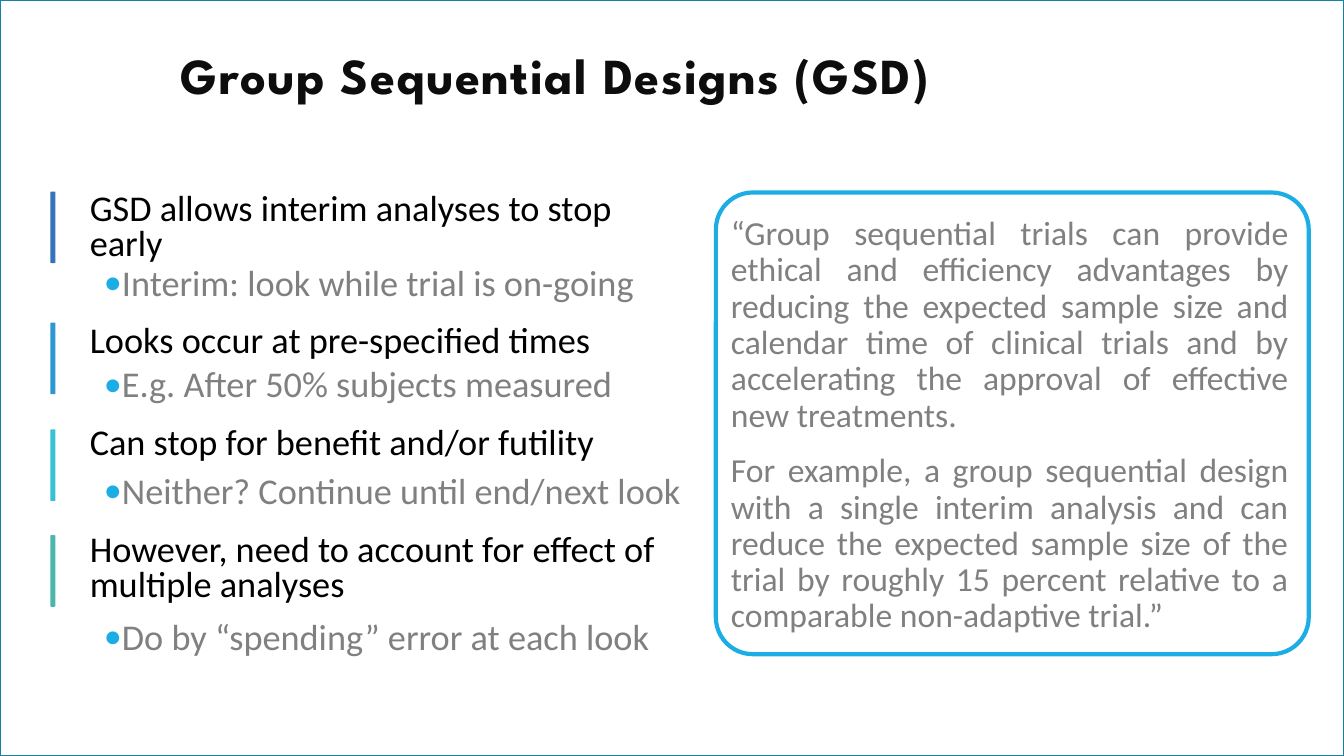
from dataclasses import dataclass

from lxml.etree import SubElement
from pptx import Presentation
from pptx.dml.color import RGBColor
from pptx.enum.shapes import MSO_SHAPE
from pptx.enum.text import MSO_ANCHOR, MSO_AUTO_SIZE, PP_ALIGN
from pptx.oxml.ns import qn
from pptx.util import Inches, Pt

TITLE = "Group Sequential Designs (GSD)"
POINTS = [
    ("GSD allows interim analyses to stop early",
     "Interim: look while trial is on-going", 0.8, 1.9, "3474BB"),
    ("Looks occur at pre-specified times",
     "E.g. After 50% subjects measured", 0.9, 3.2, "2D98D3"),
    ("Can stop for benefit and/or futility",
     "Neither? Continue until end/next look", 1.0, 4.26, "35C2D6"),
    ("However, need to account for effect of multiple analyses",
     "Do by “spending” error at each look", 1.1, 5.31, "4CB6AC"),
]
QUOTE = [
    "“Group sequential trials can provide ethical and efficiency advantages by "
    "reducing the expected sample size and calendar time of clinical trials and by "
    "accelerating the approval of effective new treatments.",
    "For example, a group sequential design with a single interim analysis and can "
    "reduce the expected sample size of the trial by roughly 15 percent relative to a "
    "comparable non-adaptive trial.”",
]


@dataclass(frozen=True)
class Theme:
    title_font: str = "League Spartan"
    body_font: str = "Calibri"
    title_size: float = 36
    point_size: float = 25.9
    quote_size: float = 24
    title_color: str = "0D0D0D"
    point_color: str = "000000"
    muted: str = "808080"
    accent: str = "1CADE4"
    frame: str = "1580A9"


THEME = Theme()


def place(shape, left, top, width, height):
    shape.left, shape.top = Inches(left), Inches(top)
    shape.width, shape.height = Inches(width), Inches(height)


def style(paragraph, font_name, size, color, bold=False):
    for run in paragraph.runs:
        run.font.name = font_name
        run.font.size = Pt(size)
        run.font.bold = bold
        run.font.color.rgb = RGBColor.from_string(color)


def space(paragraph, line, before, after):
    paragraph.line_spacing = line
    paragraph.space_before = Pt(before)
    paragraph.space_after = Pt(after)


def indent(paragraph, margin, first=0.0, bullet=None):
    properties = paragraph._p.get_or_add_pPr()
    properties.set("marL", str(Inches(margin)))
    properties.set("indent", str(Inches(first)))
    if bullet:
        bullet_color = SubElement(properties, qn("a:buClr"))
        SubElement(bullet_color, qn("a:srgbClr")).set("val", THEME.accent)
        SubElement(properties, qn("a:buFont")).set("typeface", THEME.body_font)
        SubElement(properties, qn("a:buChar")).set("char", bullet)
    else:
        SubElement(properties, qn("a:buNone"))


def add_panel(slide, kind, box, fill=None, line=None, weight=0.0):
    panel = slide.shapes.add_shape(kind, *map(Inches, box))
    panel.shadow.inherit = False
    if fill:
        panel.fill.solid()
        panel.fill.fore_color.rgb = RGBColor.from_string(fill)
    else:
        panel.fill.background()
    if line:
        panel.line.color.rgb = RGBColor.from_string(line)
        panel.line.width = Pt(weight)
    else:
        panel.line.fill.background()
    return panel


def add_title(slide):
    title = slide.shapes.title
    place(title, 0.52, 0.21, 9.98, 1.16)
    frame = title.text_frame
    frame.text = TITLE
    frame.auto_size = MSO_AUTO_SIZE.NONE
    frame.vertical_anchor = MSO_ANCHOR.MIDDLE
    heading = frame.paragraphs[0]
    heading.alignment = PP_ALIGN.CENTER
    heading.line_spacing = 0.8
    style(heading, THEME.title_font, THEME.title_size, THEME.title_color, bold=True)
    heading.runs[0]._r.get_or_add_rPr().set("spc", "100")


def add_points(slide):
    body = slide.placeholders[1]
    place(body, 0.79, 1.87, 6.08, 5.09)
    frame = body.text_frame
    frame.text = "\n".join(text for point in POINTS for text in point[:2])
    frame.auto_size = MSO_AUTO_SIZE.NONE
    statements, details = frame.paragraphs[::2], frame.paragraphs[1::2]
    for index, (statement, detail, point) in enumerate(zip(statements, details, POINTS)):
        _, _, detail_line, bar_top, bar_color = point
        space(statement, 0.8, 12 if index else 0, 2)
        indent(statement, 0)
        style(statement, THEME.body_font, THEME.point_size, THEME.point_color)
        detail.level = 1
        space(detail, detail_line, 2, 4)
        indent(detail, 0.29, -0.15, "•")
        style(detail, THEME.body_font, THEME.point_size, THEME.muted)
        add_panel(slide, MSO_SHAPE.ROUNDED_RECTANGLE, (0.5, bar_top, 0.05, 0.71),
                  fill=bar_color)


def add_quote(slide):
    quote = slide.shapes.add_textbox(*map(Inches, (7.1, 2.1, 5.73, 4.66)))
    frame = quote.text_frame
    frame.word_wrap = True
    frame.margin_left = frame.margin_right = Inches(0.05)
    frame.margin_top = frame.margin_bottom = Inches(0.05)
    frame.text = "\n".join(QUOTE)
    for index, passage in enumerate(frame.paragraphs):
        passage.alignment = PP_ALIGN.JUSTIFY
        space(passage, 0.9, 12 if index else 0, 2)
        indent(passage, 0.1)
        style(passage, THEME.body_font, THEME.quote_size, THEME.muted)
    border = add_panel(slide, MSO_SHAPE.ROUNDED_RECTANGLE, (7.1, 1.91, 5.88, 4.58),
                       line=THEME.accent, weight=3)
    border.adjustments[0] = 0.08


def main():
    deck = Presentation()
    deck.slide_width, deck.slide_height = Inches(13.33), Inches(7.5)
    slide = deck.slides.add_slide(deck.slide_layouts[1])
    add_panel(slide, MSO_SHAPE.RECTANGLE, (0, 0, 13.33, 7.5),
              line=THEME.frame, weight=1.25)
    add_title(slide)
    add_points(slide)
    add_quote(slide)
    deck.save("out.pptx")


if __name__ == "__main__":
    main()
